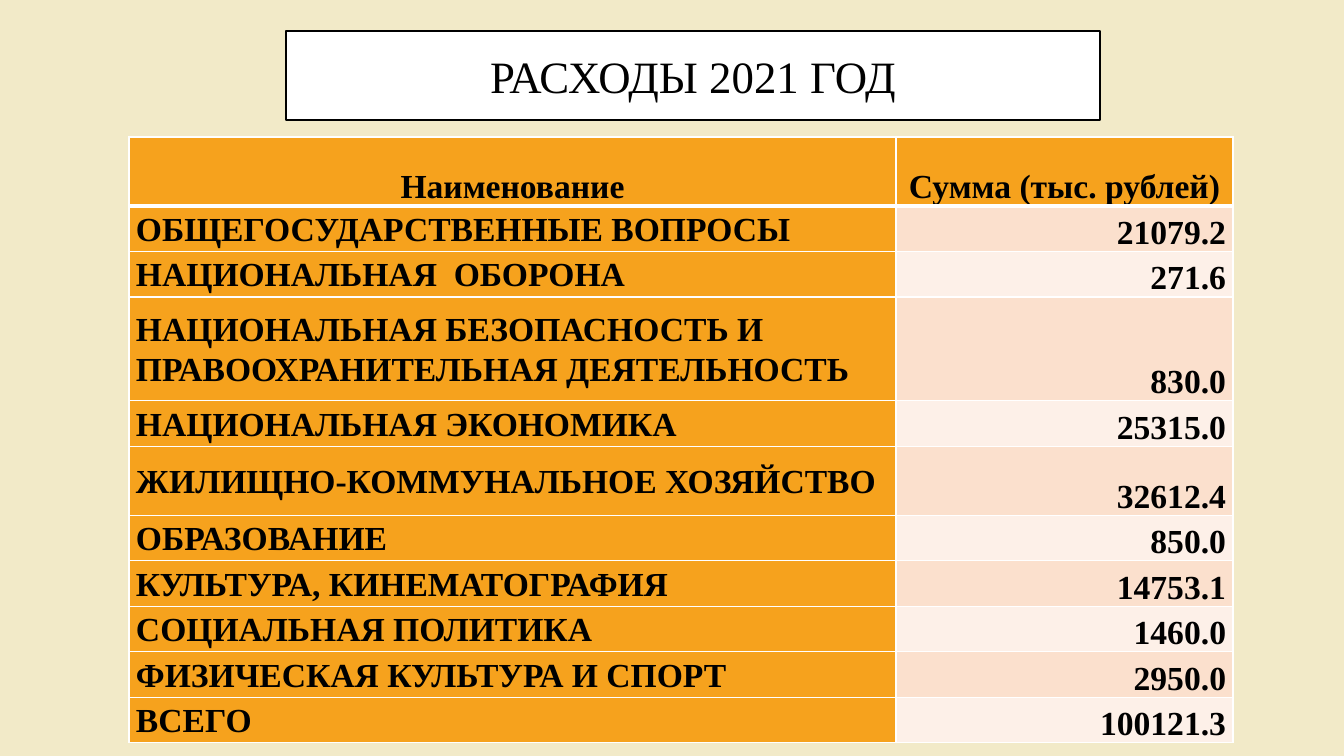
"""Build the slide with the table of 2021 expenses."""
import pptx
import pptx.dml.color
import pptx.enum.shapes
import pptx.enum.text
import pptx.oxml
import pptx.oxml.ns
import pptx.util

TITLE = "РАСХОДЫ 2021 ГОД"
HEADER = ("Наименование", "Сумма (тыс. рублей)")
EXPENSES = [
    ("ОБЩЕГОСУДАРСТВЕННЫЕ ВОПРОСЫ", "21079.2"),
    ("НАЦИОНАЛЬНАЯ  ОБОРОНА", "271.6"),
    ("НАЦИОНАЛЬНАЯ БЕЗОПАСНОСТЬ И ПРАВООХРАНИТЕЛЬНАЯ ДЕЯТЕЛЬНОСТЬ", "830.0"),
    ("НАЦИОНАЛЬНАЯ ЭКОНОМИКА", "25315.0"),
    ("ЖИЛИЩНО-КОММУНАЛЬНОЕ ХОЗЯЙСТВО", "32612.4"),
    ("ОБРАЗОВАНИЕ", "850.0"),
    ("КУЛЬТУРА, КИНЕМАТОГРАФИЯ", "14753.1"),
    ("СОЦИАЛЬНАЯ ПОЛИТИКА", "1460.0"),
    ("ФИЗИЧЕСКАЯ КУЛЬТУРА И СПОРТ", "2950.0"),
    ("ВСЕГО", "100121.3"),
]

SLIDE_SIZE = (1344, 756)
TITLE_BOX = (286, 31, 814, 89)
TABLE_BOX = (129, 137, 1104, 606)
COLUMN_WIDTHS = (767, 337)
TALL_ROWS = {0: 69, 3: 104, 5: 69}
CELL_INSET = 7
BACKGROUND, ORANGE, WHITE, BLACK = "F2EAC8", "F6A21D", "FFFFFF", "000000"
BANDS = ("FDF0E8", "FBE0CD")
FONT = "Times New Roman"

ALIGN = pptx.enum.text.PP_ALIGN
ANCHOR = pptx.enum.text.MSO_ANCHOR


def px(length):
    return pptx.util.Emu(round(length * 914400 / 100.8))


def color(value):
    return pptx.dml.color.RGBColor.from_string(value)


def set_fill(target, value):
    target.fill.solid()
    target.fill.fore_color.rgb = color(value)


def set_attributes(target, values):
    for name, value in values.items():
        setattr(target, name, value)


def write(text_frame, text, size, bold, paragraph_format):
    paragraph = text_frame.paragraphs[0]
    set_attributes(paragraph, paragraph_format)
    run = paragraph.add_run()
    run.text = text
    set_attributes(run.font, {"name": FONT, "size": pptx.util.Pt(size), "bold": bold})
    run.font.color.rgb = color(BLACK)


def set_borders(cell, widths):
    properties = cell._tc.get_or_add_tcPr()
    for position, (side, width) in enumerate(widths.items()):
        border = pptx.oxml.parse_xml(
            f'<a:{side} {pptx.oxml.ns.nsdecls("a")} w="{pptx.util.Pt(width)}">'
            f'<a:solidFill><a:srgbClr val="{WHITE}"/></a:solidFill></a:{side}>'
        )
        properties.insert(position, border)


def add_title(slide):
    shape = slide.shapes.add_shape(
        pptx.enum.shapes.MSO_SHAPE.RECTANGLE, *map(px, TITLE_BOX)
    )
    shape.shadow.inherit = False
    set_fill(shape, WHITE)
    shape.line.color.rgb = color(BLACK)
    shape.line.width = pptx.util.Pt(1)
    shape.text_frame.vertical_anchor = ANCHOR.MIDDLE
    write(shape.text_frame, TITLE, 32, False, {"alignment": ALIGN.CENTER})


def cell_style(row, column, text):
    if row == 0:
        return ORANGE, ANCHOR.BOTTOM, ALIGN.CENTER
    if column == 1:
        return BANDS[row % 2], ANCHOR.BOTTOM, ALIGN.RIGHT
    wraps = row == 3
    return ORANGE, ANCHOR.MIDDLE, ALIGN.LEFT if wraps else ALIGN.JUSTIFY


def add_expenses(slide):
    rows = [HEADER, *EXPENSES]
    table = slide.shapes.add_table(len(rows), len(HEADER), *map(px, TABLE_BOX)).table
    for column, width in zip(table.columns, COLUMN_WIDTHS):
        column.width = px(width)
    plain_height = (TABLE_BOX[3] - sum(TALL_ROWS.values())) / (len(rows) - len(TALL_ROWS))
    for row, texts in enumerate(rows):
        table.rows[row].height = px(TALL_ROWS.get(row, plain_height))
        for column, text in enumerate(texts):
            cell = table.cell(row, column)
            fill, anchor, alignment = cell_style(row, column, text)
            set_fill(cell, fill)
            set_attributes(cell, {
                "vertical_anchor": anchor,
                "margin_left": px(CELL_INSET),
                "margin_right": px(CELL_INSET),
                "margin_top": 0,
                "margin_bottom": 0,
            })
            set_borders(cell, {
                "lnL": 1,
                "lnR": 1,
                "lnT": 3 if row == 1 else 1,
                "lnB": 3 if row == 0 else 1,
            })
            write(cell.text_frame, text, 24, True,
                  {"alignment": alignment, "line_spacing": 1.07})


def main():
    presentation = pptx.Presentation()
    presentation.slide_width, presentation.slide_height = map(px, SLIDE_SIZE)
    slide = presentation.slides.add_slide(presentation.slide_layouts[6])
    set_fill(slide.background, BACKGROUND)
    add_expenses(slide)
    add_title(slide)
    presentation.save("out.pptx")


if __name__ == "__main__":
    main()
